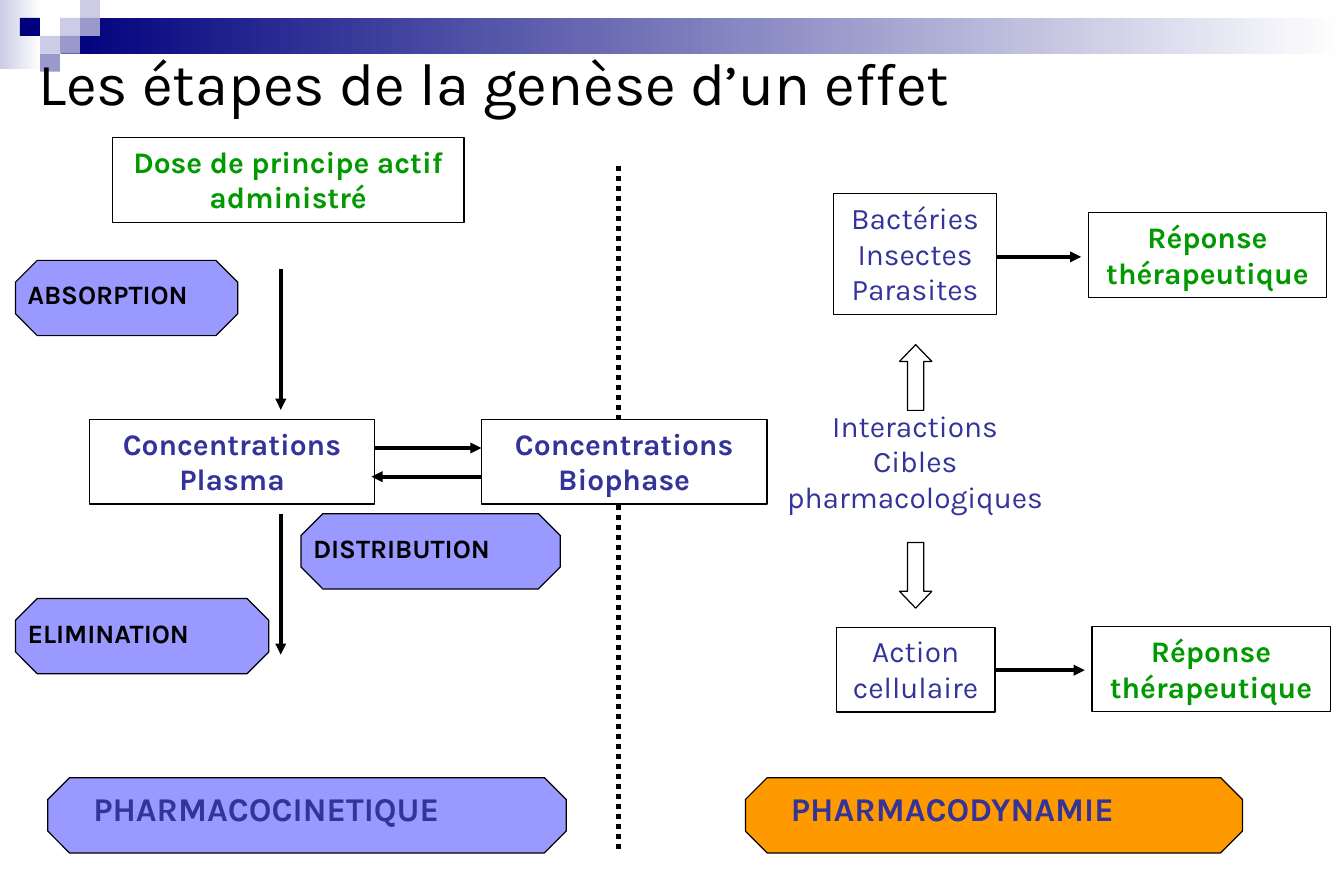
from dataclasses import dataclass

from lxml import etree
from pptx import Presentation
from pptx.dml.color import RGBColor
from pptx.enum.dml import MSO_LINE
from pptx.enum.shapes import MSO_CONNECTOR, MSO_SHAPE
from pptx.enum.text import MSO_ANCHOR, MSO_AUTO_SIZE, PP_ALIGN
from pptx.oxml.ns import qn
from pptx.util import Inches, Pt

RECTANGLE, OCTAGON = MSO_SHAPE.RECTANGLE, MSO_SHAPE.OCTAGON
UP_ARROW, DOWN_ARROW = MSO_SHAPE.UP_ARROW, MSO_SHAPE.DOWN_ARROW
STRAIGHT = MSO_CONNECTOR.STRAIGHT
DOTTED = MSO_LINE.ROUND_DOT
TOP, MIDDLE = MSO_ANCHOR.TOP, MSO_ANCHOR.MIDDLE
LEFT, CENTER = PP_ALIGN.LEFT, PP_ALIGN.CENTER
NO_AUTOFIT = MSO_AUTO_SIZE.NONE

BLACK = RGBColor(0x00, 0x00, 0x00)
WHITE = RGBColor(0xFF, 0xFF, 0xFF)
NAVY = RGBColor(0x00, 0x00, 0x7D)
PALE = RGBColor(0xCC, 0xCC, 0xE6)
LAVENDER = RGBColor(0x99, 0x99, 0xCC)
PERIWINKLE = RGBColor(0x99, 0x99, 0xFF)
ORANGE = RGBColor(0xFF, 0x99, 0x00)
INDIGO = RGBColor(0x33, 0x33, 0x99)
GREEN = RGBColor(0x00, 0x99, 0x00)

FONT = "Karla"
SLIDE_WIDTH, SLIDE_HEIGHT = Inches(11.25), Inches(7.5)
COLUMN, ROW = SLIDE_WIDTH / 45, SLIDE_HEIGHT / 30
TILE_WIDTH, TILE_HEIGHT = 0.67, 0.6


@dataclass(frozen=True)
class Area:
    """A place on the slide, in grid columns and rows."""
    column: float
    row: float
    columns: float
    rows: float

    def emu(self) -> tuple[int, int, int, int]:
        return (round(self.column * COLUMN), round(self.row * ROW),
                round(self.columns * COLUMN), round(self.rows * ROW))


@dataclass(frozen=True)
class Step:
    text: str
    area: Area
    color: RGBColor = INDIGO
    bold: bool = False
    framed: bool = True


@dataclass(frozen=True)
class Phase:
    text: str
    area: Area
    fill: RGBColor = PERIWINKLE
    color: RGBColor = BLACK
    size: int = 16
    indent: float = 0.01
    drop: float = 0.06


@dataclass(frozen=True)
class Link:
    start: tuple[float, float]
    end: tuple[float, float]


MOSAIC = [(3, 1, PALE), (4, 0, PALE), (4, 1, LAVENDER), (2, 2, PALE),
          (1, 1, NAVY), (3, 2, LAVENDER), (2, 3, LAVENDER)]

STEPS = [
    Step("Dose de principe actif\nadministré", Area(3.76, 4.6, 11.78, 2.84), GREEN, True),
    Step("Concentrations\nPlasma", Area(3, 14.04, 9.54, 2.84), bold=True),
    Step("Concentrations\nBiophase", Area(16.12, 14.04, 9.56, 2.84), bold=True),
    Step("Bactéries\nInsectes\nParasites", Area(27.92, 6.48, 5.44, 4.04)),
    Step("Interactions\nCibles\npharmacologiques", Area(25.68, 13.44, 9.92, 4), framed=False),
    Step("Action\ncellulaire", Area(28, 21, 5.32, 2.84)),
    Step("Réponse\nthérapeutique", Area(36.44, 7.12, 7.98, 2.84), GREEN, True),
    Step("Réponse\nthérapeutique", Area(36.56, 20.98, 7.98, 2.84), GREEN, True),
]

PHASES = [
    Phase("ABSORPTION", Area(0.52, 8.72, 7.44, 2.52)),
    Phase("DISTRIBUTION", Area(10.08, 17.2, 8.68, 2.52)),
    Phase("ELIMINATION", Area(0.52, 20.04, 8.48, 2.52)),
    Phase("PHARMACOCINETIQUE", Area(1.6, 26.04, 17.36, 2.52),
          color=INDIGO, size=20, indent=0.29, drop=0),
    Phase("PHARMACODYNAMIE", Area(24.96, 26.04, 16.64, 2.52),
          ORANGE, INDIGO, 20, 0.29, 0),
]

LINKS = [
    Link((9.4, 9), (9.4, 13.72)),
    Link((9.4, 17.2), (9.4, 21.92)),
    Link((12.54, 15), (16.12, 15)),
    Link((16.12, 15.96), (12.44, 15.96)),
    Link((33.36, 8.6), (36.2, 8.6)),
    Link((33.32, 22.44), (36.32, 22.44)),
]

TARGET_ARROWS = [(UP_ARROW, Area(30.12, 11.54, 1.08, 2.2)),
                 (DOWN_ARROW, Area(30.12, 18.16, 1.08, 2.2))]


def add_outline(slide, preset, area: Area, fill: RGBColor | None = None,
                line: RGBColor | None = BLACK):
    shape = slide.shapes.add_shape(preset, *area.emu())
    shape.shadow.inherit = False
    if fill is None:
        shape.fill.background()
    else:
        shape.fill.solid()
        shape.fill.fore_color.rgb = fill
    if line is None:
        shape.line.fill.background()
    else:
        shape.line.color.rgb = line
        shape.line.width = Pt(0.75)
    return shape


def write(frame, text: str, size: int, color: RGBColor, bold: bool = False,
          alignment=LEFT, anchor=TOP) -> None:
    frame.text = text
    frame.word_wrap = True
    frame.auto_size = NO_AUTOFIT
    frame.vertical_anchor = anchor
    for paragraph in frame.paragraphs:
        paragraph.alignment = alignment
        for run in paragraph.runs:
            run.font.name = FONT
            run.font.size = Pt(size)
            run.font.bold = bold
            run.font.color.rgb = color


def add_fade(slide, area: Area, color: RGBColor) -> None:
    """Add a band that fades from the colour to white, left to right."""
    band = add_outline(slide, RECTANGLE, area, line=None)
    band.fill.gradient()
    band.fill.gradient_angle = 0
    for stop, shade in zip(band.fill.gradient_stops, (color, WHITE)):
        stop.color.rgb = shade


def add_header(slide) -> None:
    add_fade(slide, Area(0, 0, 1.4, 2.32), PALE)
    add_fade(slide, Area(2.04, 0.6, 42.96, 1.2), NAVY)
    for column, row, color in MOSAIC:
        tile = Area(column * TILE_WIDTH, row * TILE_HEIGHT, TILE_WIDTH, TILE_HEIGHT)
        add_outline(slide, RECTANGLE, tile, color, line=None)


def add_title(slide) -> None:
    title = slide.shapes.title
    title.left, title.top, title.width, title.height = Area(0.88, 0.84, 42.88, 3.76).emu()
    write(title.text_frame, "Les étapes de la genèse d’un effet", 36, BLACK, anchor=MIDDLE)
    slide.shapes._spTree.append(title._element)  # in front of the header


def add_line(slide, link: Link, width: float):
    (x1, y1), (x2, y2) = link.start, link.end
    line = slide.shapes.add_connector(STRAIGHT, round(x1 * COLUMN), round(y1 * ROW),
                                      round(x2 * COLUMN), round(y2 * ROW))
    line.line.color.rgb = BLACK
    line.line.width = Pt(width)
    etree.SubElement(line._element.spPr, qn("a:effectLst"))
    return line


def add_arrow(slide, link: Link) -> None:
    arrow = add_line(slide, link, 2.25)
    etree.SubElement(arrow.line._get_or_add_ln(), qn("a:tailEnd"), type="triangle")


def add_step(slide, step: Step) -> None:
    if step.framed:
        box = add_outline(slide, RECTANGLE, step.area, WHITE)
    else:
        box = slide.shapes.add_textbox(*step.area.emu())
    write(box.text_frame, step.text, 18, step.color, step.bold, CENTER)


def add_phase(slide, phase: Phase) -> None:
    label = add_outline(slide, OCTAGON, phase.area, phase.fill)
    label.adjustments[0] = 0.29
    frame = label.text_frame
    frame.margin_left, frame.margin_top = Inches(phase.indent), Inches(phase.drop)
    frame.margin_right = frame.margin_bottom = 0
    write(frame, phase.text, phase.size, phase.color, bold=True)


def main() -> None:
    deck = Presentation()
    deck.slide_width, deck.slide_height = SLIDE_WIDTH, SLIDE_HEIGHT
    slide = deck.slides.add_slide(deck.slide_layouts[5])
    add_header(slide)
    add_title(slide)
    divider = add_line(slide, Link((20.72, 5.56), (20.72, 28.56)), 3)
    divider.line.dash_style = DOTTED
    for phase in PHASES:
        add_phase(slide, phase)
    for step in STEPS:
        add_step(slide, step)
    for preset, area in TARGET_ARROWS:
        target_arrow = add_outline(slide, preset, area)
        target_arrow.adjustments[1] = 0.52
    for link in LINKS:
        add_arrow(slide, link)
    deck.save("out.pptx")


if __name__ == "__main__":
    main()
